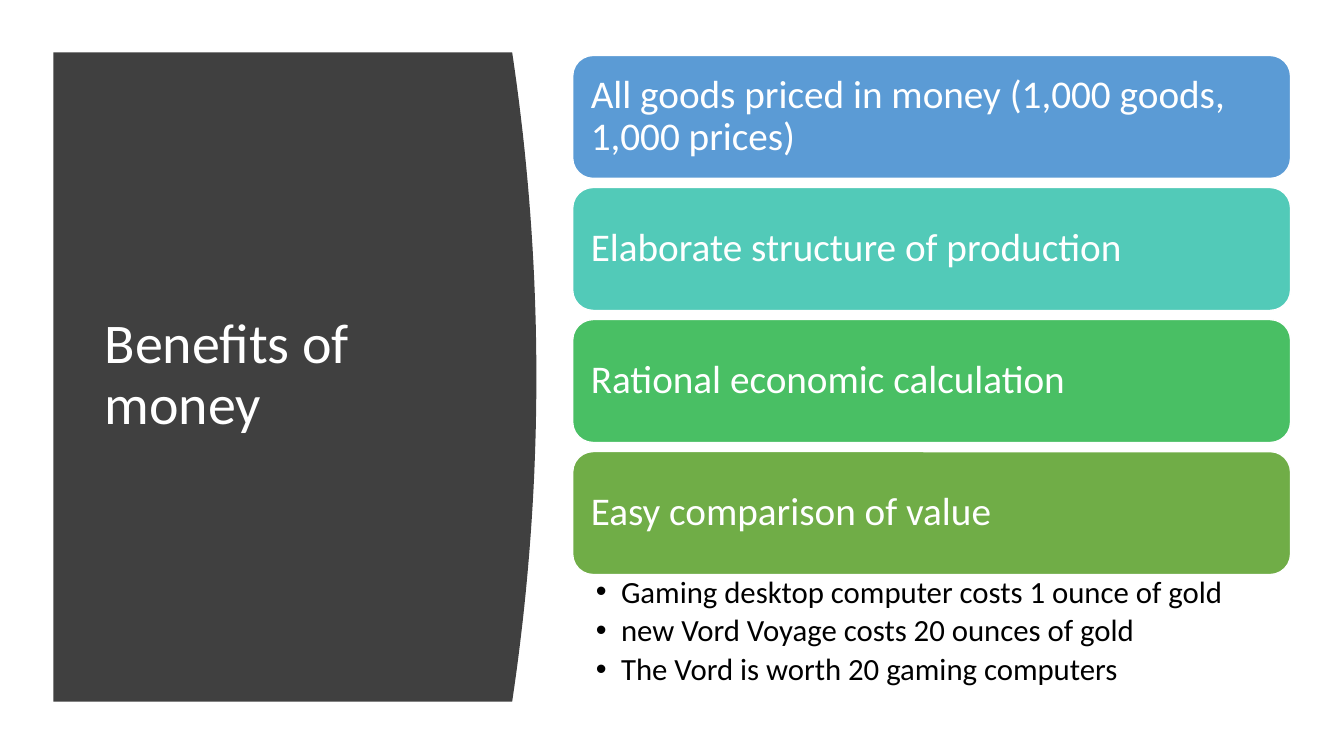
from pptx import Presentation
from pptx.dml.color import RGBColor
from pptx.enum.shapes import MSO_SHAPE
from pptx.enum.text import MSO_ANCHOR, PP_ALIGN
from pptx.oxml import parse_xml
from pptx.oxml.ns import nsdecls
from pptx.util import Pt

TITLE = "Benefits of money"
BENEFITS = [
    ("All goods priced in money (1,000 goods, 1,000 prices)", "5B9BD5"),
    ("Elaborate structure of production", "52CAB8"),
    ("Rational economic calculation", "49BF64"),
    ("Easy comparison of value", "70AD47"),
]
EXAMPLES = [
    "Gaming desktop computer costs 1 ounce of gold",
    "new Vord Voyage costs 20 ounces of gold",
    "The Vord is worth 20 gaming computers",
]

PX = 9144  # EMU per px, 100 px to the inch
FONT = "Calibri"
PANEL_LEFT, PANEL_TOP, PANEL_BOTTOM = 53, 52, 696
PANEL_EDGE, PANEL_BULGE, CURVE_STEPS = 508, 24, 40
CARD_LEFT, CARD_TOP, CARD_WIDTH, CARD_HEIGHT, CARD_PITCH = 568, 55, 712, 122, 131


def px(*lengths):
    return [length * PX for length in lengths]


def color(hex_string):
    return RGBColor.from_string(hex_string)


def set_frame(frame, anchor, insets):
    """Wrap the text, anchor it and set left, top, right and bottom insets."""
    frame.word_wrap = True
    frame.vertical_anchor = anchor
    (frame.margin_left, frame.margin_top,
     frame.margin_right, frame.margin_bottom) = px(*insets)


def write(paragraph, text, size, hex_string):
    paragraph.text = text
    paragraph.alignment = PP_ALIGN.LEFT
    paragraph.line_spacing = 0.9
    paragraph.font.name = FONT
    paragraph.font.size = Pt(size)
    paragraph.font.color.rgb = color(hex_string)


def add_bullet(paragraph, indent):
    properties = paragraph._p.get_or_add_pPr()
    properties.set("marL", str(indent * PX))
    properties.set("indent", str(-indent * PX))
    properties.append(parse_xml(f'<a:buFont {nsdecls("a")} typeface="Arial"/>'))
    properties.append(parse_xml(f'<a:buChar {nsdecls("a")} char="•"/>'))


def add_panel(slide):
    """Draw the dark panel, whose right edge is a parabola."""
    height = PANEL_BOTTOM - PANEL_TOP
    edge = []
    for step in range(CURVE_STEPS + 1):
        part = step / CURVE_STEPS
        bulge = PANEL_BULGE * (1 - (2 * part - 1) ** 2)
        edge.append(px(PANEL_EDGE + bulge, PANEL_TOP + height * part))
    builder = slide.shapes.build_freeform(*px(PANEL_LEFT, PANEL_TOP))
    builder.add_line_segments(edge + [px(PANEL_LEFT, PANEL_BOTTOM)], close=True)
    panel = builder.convert_to_shape()
    panel.shadow.inherit = False
    panel.fill.solid()
    panel.fill.fore_color.rgb = color("404040")
    panel.line.fill.background()


def add_title(slide):
    title = slide.shapes.add_textbox(*px(94, 111, 374, 524))
    set_frame(title.text_frame, MSO_ANCHOR.MIDDLE, (10, 5, 10, 5))
    write(title.text_frame.paragraphs[0], TITLE, 40, "FFFFFF")


def add_card(slide, row, text, fill):
    top = CARD_TOP + row * CARD_PITCH
    card = slide.shapes.add_shape(MSO_SHAPE.ROUNDED_RECTANGLE,
                                  *px(CARD_LEFT, top, CARD_WIDTH, CARD_HEIGHT))
    card.shadow.inherit = False
    card.fill.solid()
    card.fill.fore_color.rgb = color(fill)
    card.line.color.rgb = color("FFFFFF")
    card.line.width = Pt(1)
    set_frame(card.text_frame, MSO_ANCHOR.MIDDLE, (12, 12, 12, 12))
    write(card.text_frame.paragraphs[0], text, 28, "FFFFFF")


def add_examples(slide):
    top = CARD_TOP + (len(BENEFITS) - 1) * CARD_PITCH + CARD_HEIGHT - 2
    examples = slide.shapes.add_textbox(*px(CARD_LEFT, top, CARD_WIDTH, 124))
    frame = examples.text_frame
    set_frame(frame, MSO_ANCHOR.TOP, (23, 4, 22, 4))
    for index, text in enumerate(EXAMPLES):
        paragraph = frame.add_paragraph() if index else frame.paragraphs[0]
        write(paragraph, text, 22, "000000")
        paragraph.space_after = Pt(4)
        add_bullet(paragraph, 25)


def main():
    presentation = Presentation()
    presentation.slide_width, presentation.slide_height = px(1333, 750)
    slide = presentation.slides.add_slide(presentation.slide_layouts[6])
    add_panel(slide)
    add_title(slide)
    for row, (text, fill) in enumerate(BENEFITS):
        add_card(slide, row, text, fill)
    add_examples(slide)
    presentation.save("out.pptx")


if __name__ == "__main__":
    main()
